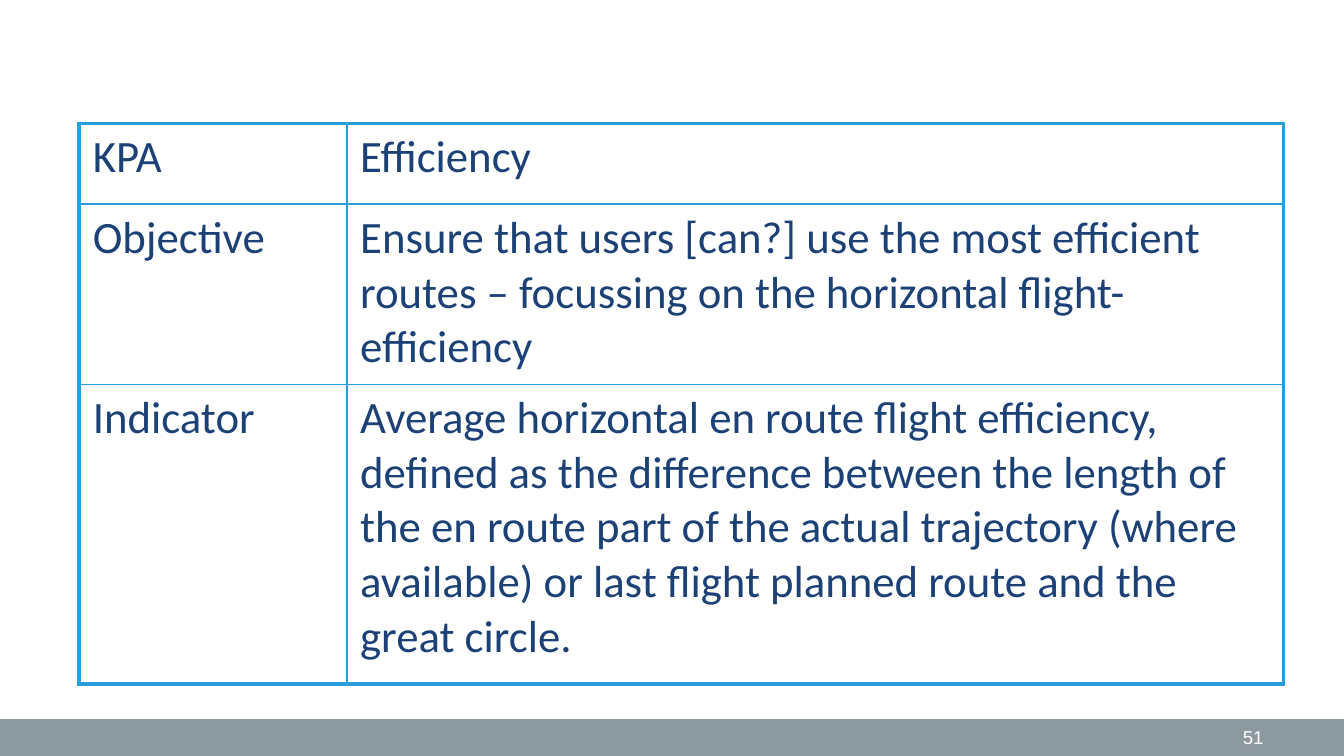
from lxml.etree import SubElement
from pptx import Presentation
from pptx.dml.color import RGBColor
from pptx.enum.shapes import MSO_SHAPE
from pptx.enum.text import MSO_ANCHOR, PP_ALIGN
from pptx.oxml.ns import qn
from pptx.util import Inches, Pt

ROWS = [
    ("KPA", "Efficiency"),
    ("Objective", "Ensure that users [can?] use the most efficient routes – "
                  "focussing on the horizontal flight-efficiency"),
    ("Indicator", "Average horizontal en route flight efficiency, defined as the "
                  "difference between the length of the en route part of the actual "
                  "trajectory (where available) or last flight planned route and the "
                  "great circle."),
]
PAGE_NUMBER = "51"
SLIDE_WIDTH = 10
SLIDE_HEIGHT = SLIDE_WIDTH * 9 / 16
COL_WIDTHS = [1.99, 6.97]
ROW_HEIGHTS = [0.6, 1.34, 2.23]
TABLE_LEFT, TABLE_TOP = 0.59, 0.92
FOOTER_TOP = 5.35
FOOTER_HEIGHT = SLIDE_HEIGHT - FOOTER_TOP
BORDER, OUTER, INNER = "279DD9", 2.25, 1
CELL_FONT = {"name": "Calibri", "size": Pt(24)}
NUMBER_FONT = {"name": "Arial", "size": Pt(10)}


def rgb(value):
    return RGBColor.from_string(value)


def write(tf, text, font, color):
    p = tf.paragraphs[0]
    r = p.add_run()
    r.text = text
    for name, value in font.items():
        setattr(r.font, name, value)
    r.font.color.rgb = rgb(color)
    return p


def add_borders(cell, edges):
    tc_pr = cell._tc.get_or_add_tcPr()
    for side, is_outer in edges.items():
        width = Pt(OUTER if is_outer else INNER)
        ln = SubElement(tc_pr, qn(f"a:ln{side}"), w=str(width))
        fill = SubElement(ln, qn("a:solidFill"))
        SubElement(fill, qn("a:srgbClr"), val=BORDER)


def add_footer(s):
    bar = s.shapes.add_shape(MSO_SHAPE.RECTANGLE, 0, Inches(FOOTER_TOP),
                             Inches(SLIDE_WIDTH), Inches(FOOTER_HEIGHT))
    bar.shadow.inherit = False
    bar.fill.solid()
    bar.fill.fore_color.rgb = rgb("8C99A1")
    bar.line.fill.background()


def add_page_number(s):
    box = s.shapes.add_textbox(Inches(7.17), Inches(FOOTER_TOP),
                               Inches(2.33), Inches(FOOTER_HEIGHT))
    tf = box.text_frame
    tf.word_wrap = True
    tf.vertical_anchor = MSO_ANCHOR.MIDDLE
    write(tf, PAGE_NUMBER, NUMBER_FONT, "FFFFFF").alignment = PP_ALIGN.RIGHT


def add_kpa_table(s):
    last_row, last_col = len(ROWS) - 1, len(COL_WIDTHS) - 1
    table = s.shapes.add_table(
        len(ROWS), len(COL_WIDTHS), Inches(TABLE_LEFT), Inches(TABLE_TOP),
        Inches(sum(COL_WIDTHS)), Inches(sum(ROW_HEIGHTS))).table
    table.first_row = table.horz_banding = False
    for column, width in zip(table.columns, COL_WIDTHS):
        column.width = Inches(width)
    for row, height in zip(table.rows, ROW_HEIGHTS):
        row.height = Inches(height)
    for i, texts in enumerate(ROWS):
        for j, text in enumerate(texts):
            cell = table.cell(i, j)
            add_borders(cell, {"L": j == 0, "R": j == last_col,
                               "T": i == 0, "B": i == last_row})
            cell.fill.solid()
            cell.fill.fore_color.rgb = rgb("FFFFFF")
            write(cell.text_frame, text, CELL_FONT, "1B4177")


def main():
    prs = Presentation()
    prs.slide_width, prs.slide_height = Inches(SLIDE_WIDTH), Inches(SLIDE_HEIGHT)
    s = prs.slides.add_slide(prs.slide_layouts[6])
    add_footer(s)
    add_kpa_table(s)
    add_page_number(s)
    prs.save("out.pptx")


if __name__ == "__main__":
    main()
